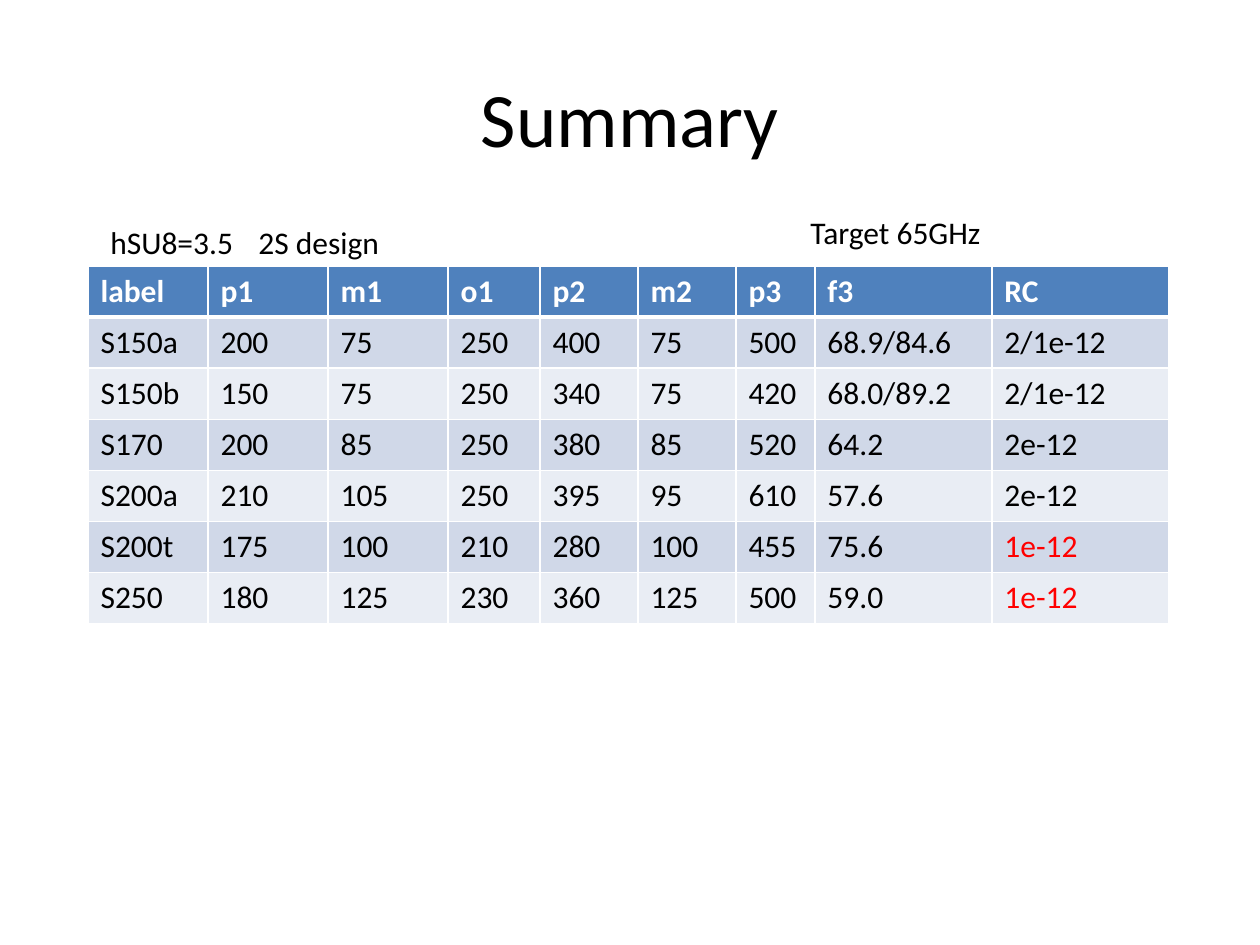
import dataclasses

import pptx
import pptx.dml.color
import pptx.enum.text
import pptx.oxml
import pptx.oxml.ns
import pptx.util

PX = pptx.util.Inches(1) / 126
TITLE_ONLY = 5


@dataclasses.dataclass(frozen=True)
class Theme:
    font: str = "Calibri"
    title_size: int = 44
    body_size: int = 18
    ink: str = "000000"
    paper: str = "FFFFFF"
    header: str = "4F81BD"
    bands: tuple = ("D0D8E8", "E9EDF4")
    alert: str = "FF0000"
    thin: int = 1
    thick: int = 3


HEADINGS = ["label", "p1", "m1", "o1", "p2", "m2", "p3", "f3", "RC"]
DESIGNS = [
    ["S150a", "200", "75", "250", "400", "75", "500", "68.9/84.6", "2/1e-12"],
    ["S150b", "150", "75", "250", "340", "75", "420", "68.0/89.2", "2/1e-12"],
    ["S170", "200", "85", "250", "380", "85", "520", "64.2", "2e-12"],
    ["S200a", "210", "105", "250", "395", "95", "610", "57.6", "2e-12"],
    ["S200t", "175", "100", "210", "280", "100", "455", "75.6", "1e-12"],
    ["S250", "180", "125", "230", "360", "125", "500", "59.0", "1e-12"],
]
COLUMN_WIDTHS = [120, 120, 120, 92, 98, 98, 79, 177, 177]
ROW_HEIGHT = 51
BEST_RC = "1e-12"
NOTES = [
    ("2S design", 246, 217, 147),
    ("hSU8=3.5", 98, 217, 150),
    ("Target 65GHz", 798, 207, 198),
]


def emu(px):
    return pptx.util.Emu(round(px * PX))


def rgb(value):
    return pptx.dml.color.RGBColor.from_string(value)


def apply(target, values):
    for name, value in values.items():
        setattr(target, name, value)


class SlideBuilder:
    def __init__(self, deck, theme):
        self.theme = theme
        self.slide = deck.slides.add_slide(deck.slide_layouts[TITLE_ONLY])

    def add_text(self, frame, text, size, color, bold=False, align=None):
        para = frame.paragraphs[0]
        para.alignment = align
        span = para.add_run()
        span.text = text
        apply(span.font, {"name": self.theme.font, "size": pptx.util.Pt(size), "bold": bold})
        span.font.color.rgb = rgb(color)

    def title(self, text, left, top, width, height):
        box = self.slide.shapes.title
        apply(box, {"left": emu(left), "top": emu(top),
                    "width": emu(width), "height": emu(height)})
        box.text_frame.vertical_anchor = pptx.enum.text.MSO_ANCHOR.MIDDLE
        self.add_text(box.text_frame, text, self.theme.title_size, self.theme.ink,
                      align=pptx.enum.text.PP_ALIGN.CENTER)

    def note(self, text, left, top, width, height=50):
        box = self.slide.shapes.add_textbox(emu(left), emu(top), emu(width), emu(height))
        apply(box.text_frame, {"word_wrap": False,
                               "auto_size": pptx.enum.text.MSO_AUTO_SIZE.SHAPE_TO_FIT_TEXT})
        self.add_text(box.text_frame, text, self.theme.body_size, self.theme.ink)

    def borders(self, cell, widths):
        """Draw solid cell edges; widths maps L, R, T, B (in that order) to points."""
        properties = cell._tc.get_or_add_tcPr()
        for side, width in widths.items():
            properties.append(pptx.oxml.parse_xml(
                f'<a:ln{side} {pptx.oxml.ns.nsdecls("a")} w="{pptx.util.Pt(width)}">'
                f'<a:solidFill><a:srgbClr val="{self.theme.paper}"/></a:solidFill>'
                f'</a:ln{side}>'))

    def cell(self, cell, text, fill, color, bold, widths):
        self.borders(cell, widths)
        cell.fill.solid()
        cell.fill.fore_color.rgb = rgb(fill)
        self.add_text(cell.text_frame, text, self.theme.body_size, color, bold)

    def table(self, headings, records, left, top, widths, row_height):
        theme = self.theme
        rows = [headings, *records]
        table = self.slide.shapes.add_table(
            len(rows), len(headings), emu(left), emu(top),
            emu(sum(widths)), emu(row_height * len(rows))).table
        for column, width in zip(table.columns, widths):
            column.width = emu(width)
        thin = dict.fromkeys("LRTB", theme.thin)
        for column, text in enumerate(headings):
            self.cell(table.cell(0, column), text, theme.header, theme.paper, True,
                      {**thin, "B": theme.thick})
        for row, record in enumerate(records, start=1):
            edges = {**thin, "T": theme.thick if row == 1 else theme.thin}
            fill = theme.bands[(row - 1) % 2]
            for column, text in enumerate(record):
                color = theme.alert if text == BEST_RC else theme.ink
                self.cell(table.cell(row, column), text, fill, color, False, edges)


def main():
    deck = pptx.Presentation()
    apply(deck, {"slide_width": emu(1260), "slide_height": emu(945)})
    page = SlideBuilder(deck, Theme())
    page.title("Summary", 63, 38, 1134, 157)
    page.table(HEADINGS, DESIGNS, 88, 266, COLUMN_WIDTHS, ROW_HEIGHT)
    for note in NOTES:
        page.note(*note)
    deck.save("out.pptx")


if __name__ == "__main__":
    main()
